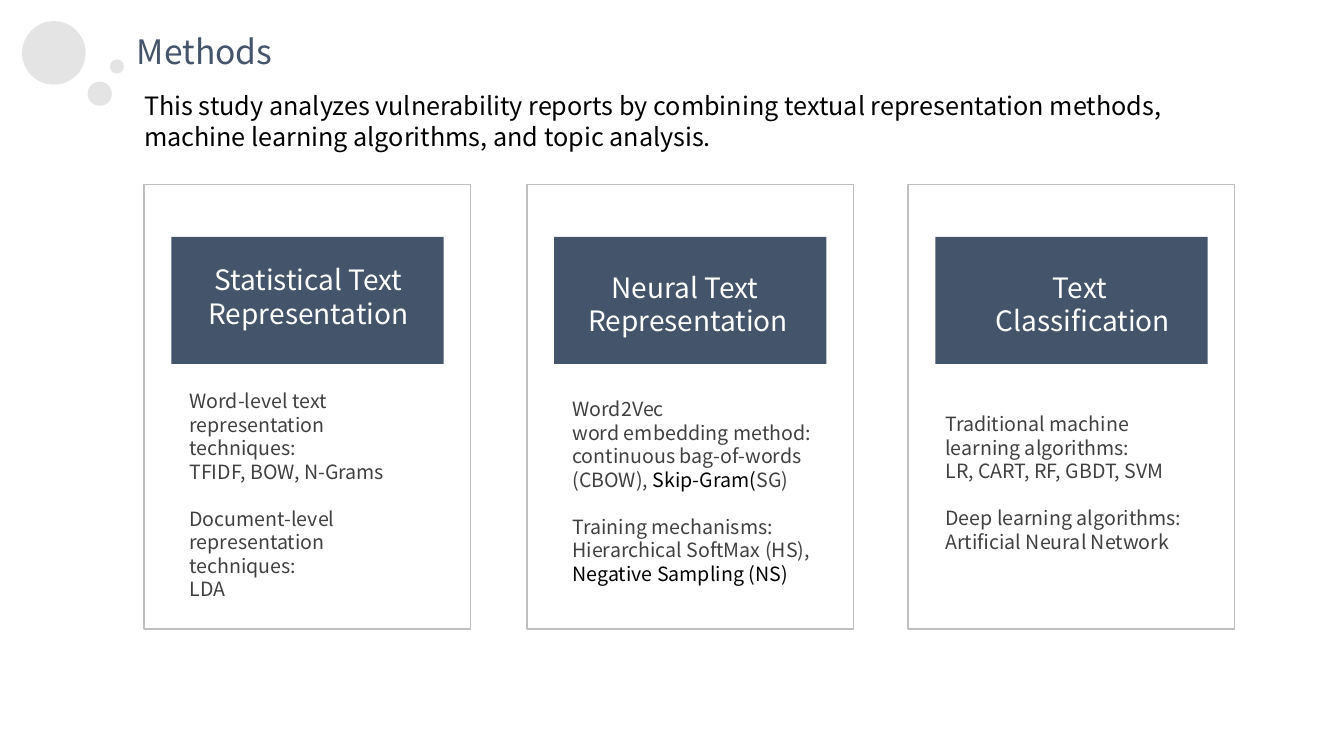
from dataclasses import dataclass

from lxml import etree
from pptx import Presentation
from pptx import util as u
from pptx.dml.color import RGBColor
from pptx.enum import shapes, text
from pptx.oxml import ns
from pptx.shapes.autoshape import Shape
from pptx.slide import Slide


@dataclass(frozen=True)
class Theme:
    font: str = "Noto Sans CJK SC"
    navy: str = "44546A"
    white: str = "FFFFFF"
    black: str = "000000"
    body: str = "404040"
    border: str = "BFBFBF"
    bubble: str = "D9D9D9"
    title_size: float = 24
    heading_size: float = 20
    intro_size: float = 18
    body_size: float = 14


THEME = Theme()


@dataclass(frozen=True)
class Box:
    left: float
    top: float
    width: float
    height: float

    def lengths(self) -> tuple[u.Length, ...]:
        return tuple(u.Pt(value) for value in (self.left, self.top, self.width, self.height))


@dataclass(frozen=True)
class Run:
    text: str
    color: str = THEME.body


@dataclass(frozen=True)
class Line:
    runs: tuple[Run, ...]
    space_before: float = 0


@dataclass(frozen=True)
class Card:
    left: float
    heading: tuple[str, ...]
    heading_box: Box
    body: tuple[Line, ...]
    body_box: Box


CARD_TOP, CARD_WIDTH, CARD_HEIGHT = 131.8, 233.3, 317.5
BAND_INSET, BAND_TOP, BAND_HEIGHT = 19.4, 169.2, 90.7
GROUP_GAP = 16.8

BUBBLES = (
    Box(15.8, 15.1, 45.4, 45.4),
    Box(62.6, 58.3, 17.3, 17.3),
    Box(78.5, 42.5, 10.1, 10.1),
)


def line(content: str, space_before: float = 0) -> Line:
    return Line((Run(content),), space_before)


CARDS = (
    Card(
        103,
        ("Statistical Text", "Representation"),
        Box(139, 184.3, 162.7, 55.4),
        (
            line("Word-level text representation techniques:"),
            line("TFIDF, BOW, N-Grams"),
            line("Document-level representation techniques:", GROUP_GAP),
            line("LDA"),
        ),
        Box(128.2, 274.3, 182.9, 159.8),
    ),
    Card(
        376.5,
        ("Neural Text", " Representation"),
        Box(406.1, 189.4, 166.3, 55.4),
        (
            line("Word2Vec"),
            line("word embedding method:"),
            Line((
                Run("continuous bag-of-words (CBOW), "),
                Run("Skip-Gram(", THEME.black),
                Run("SG)"),
            )),
            line("Training mechanisms:", GROUP_GAP),
            Line((
                Run("Hierarchical SoftMax (HS), "),
                Run("Negative Sampling (NS)", THEME.black),
            )),
        ),
        Box(401.8, 280.1, 194.4, 143.3),
    ),
    Card(
        648.7,
        ("Text ", "Classification"),
        Box(703.4, 189.4, 140.4, 55.4),
        (
            line("Traditional machine learning algorithms:"),
            line("LR, CART, RF, GBDT, SVM"),
            line("Deep learning algorithms:", GROUP_GAP),
            line("Artificial Neural Network"),
        ),
        Box(668.2, 290.9, 194.4, 108.7),
    ),
)


def add_text(
    slide: Slide,
    box: Box,
    lines: tuple[Line, ...],
    *,
    size: float,
    wrap: bool = True,
    align: text.PP_ALIGN = text.PP_ALIGN.LEFT,
) -> None:
    frame = slide.shapes.add_textbox(*box.lengths()).text_frame
    frame.word_wrap = wrap
    frame.auto_size = text.MSO_AUTO_SIZE.SHAPE_TO_FIT_TEXT
    for index, item in enumerate(lines):
        paragraph = frame.add_paragraph() if index else frame.paragraphs[0]
        paragraph.alignment = align
        paragraph.space_before = u.Pt(item.space_before)
        for part in item.runs:
            run = paragraph.add_run()
            run.text = part.text
            run.font.name = THEME.font
            run.font.size = u.Pt(size)
            run.font.color.rgb = RGBColor.from_string(part.color)


def add_figure(
    slide: Slide,
    preset: shapes.MSO_SHAPE,
    box: Box,
    *,
    fill: str | None = None,
    border: str | None = None,
) -> Shape:
    shape = slide.shapes.add_shape(preset, *box.lengths())
    shape.shadow.inherit = False
    if fill:
        shape.fill.solid()
        shape.fill.fore_color.rgb = RGBColor.from_string(fill)
    else:
        shape.fill.background()
    if border:
        shape.line.color.rgb = RGBColor.from_string(border)
        shape.line.width = u.Pt(1)
    else:
        shape.line.fill.background()
    return shape


def add_bubble(slide: Slide, box: Box) -> None:
    bubble = add_figure(slide, shapes.MSO_SHAPE.FLOWCHART_CONNECTOR, box, fill=THEME.bubble)
    color = bubble.fill._xPr.find(".//" + ns.qn("a:srgbClr"))
    etree.SubElement(color, ns.qn("a:alpha"), val="70000")


def add_card(slide: Slide, card: Card) -> None:
    rectangle = shapes.MSO_SHAPE.RECTANGLE
    band = Box(card.left + BAND_INSET, BAND_TOP, CARD_WIDTH - 2 * BAND_INSET, BAND_HEIGHT)
    frame = Box(card.left, CARD_TOP, CARD_WIDTH, CARD_HEIGHT)
    add_figure(slide, rectangle, band, fill=THEME.navy)
    add_figure(slide, rectangle, frame, border=THEME.border)
    heading = tuple(Line((Run(words, THEME.white),)) for words in card.heading)
    add_text(slide, card.heading_box, heading, size=THEME.heading_size,
             wrap=False, align=text.PP_ALIGN.CENTER)
    add_text(slide, card.body_box, card.body, size=THEME.body_size)


def main() -> None:
    presentation = Presentation()
    presentation.slide_width, presentation.slide_height = u.Pt(960), u.Pt(540)
    slide = presentation.slides.add_slide(presentation.slide_layouts[6])
    for bubble in BUBBLES:
        add_bubble(slide, bubble)
    add_text(slide, Box(90.7, 18.7, 118.1, 36), (Line((Run("Methods", THEME.navy),)),),
             size=THEME.title_size, wrap=False)
    intro = Run("This study analyzes vulnerability reports by combining textual representation "
                "methods, machine learning algorithms, and topic analysis.", THEME.black)
    add_text(slide, Box(95.8, 61.2, 785.5, 51.1), (Line((intro,)),), size=THEME.intro_size)
    for card in CARDS:
        add_card(slide, card)
    presentation.save("out.pptx")


if __name__ == "__main__":
    main()
